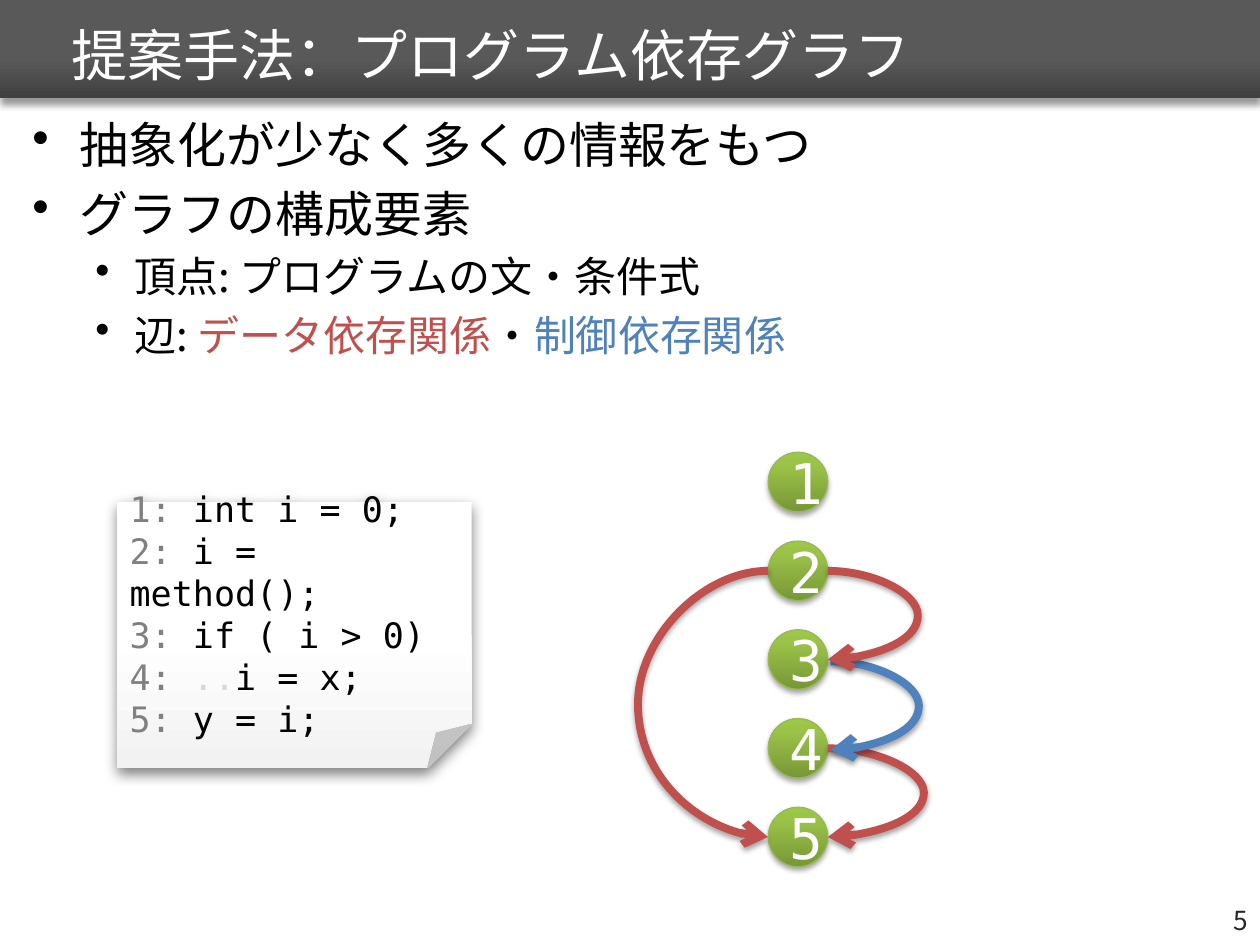
from lxml import etree
from pptx import Presentation
from pptx.dml.color import RGBColor
from pptx.enum import shapes, text
from pptx.oxml.ns import qn
from pptx.util import Pt

SANS, MONO = "Noto Sans CJK JP", "DejaVu Sans Mono"
WHITE, BLACK, GREY, PALE = "FFFFFF", "000000", "808080", "D9D9D9"
RED, BLUE = "C0504D", "4F81BD"
GREEN = [(0, "779737"), (80, "9BC348"), (100, "9DC746")]
SOFT = (35, 3.1, 1.8)


def rgb(value):
    return RGBColor.from_string(value)


def child(parent, tag, **attrs):
    """Append a DrawingML element with the given attributes."""
    return etree.SubElement(parent, qn("a:" + tag), {k: str(v) for k, v in attrs.items()})


class Deck:
    """Style and current slide; all lengths are points."""

    def __init__(self, width, height):
        self.prs = Presentation()
        self.prs.slide_width, self.prs.slide_height = Pt(width), Pt(height)
        self.s = self.prs.slides.add_slide(self.prs.slide_layouts[6])

    def shadow(self, sp, alpha, blur, dist):
        spPr = sp._element.spPr
        effects = spPr.find(qn("a:effectLst"))
        if effects is None:
            effects = child(spPr, "effectLst")
        outer = child(effects, "outerShdw", blurRad=Pt(blur), dist=Pt(dist),
                      dir=5400000, algn="t", rotWithShape=0)
        child(child(outer, "srgbClr", val=BLACK), "alpha", val=alpha * 1000)

    def shape(self, kind, box, stops, angle, shadow, line=None):
        """Add a shape with a gradient; angle runs anticlockwise from the right."""
        sp = self.s.shapes.add_shape(kind, *map(Pt, box))
        sp.fill.gradient()
        sp.fill.gradient_angle = angle
        stop_list = sp._element.spPr.find(qn("a:gradFill")).find(qn("a:gsLst"))
        for old in list(stop_list):
            stop_list.remove(old)
        for pos, color in stops:
            child(child(stop_list, "gs", pos=pos * 1000), "srgbClr", val=color)
        if line:
            sp.line.color.rgb, sp.line.width = rgb(line), Pt(0.75)
        else:
            sp.line.fill.background()
        sp.shadow.inherit = False
        self.shadow(sp, *shadow)
        return sp

    def textbox(self, box, anchor=text.MSO_ANCHOR.MIDDLE):
        sp = self.s.shapes.add_textbox(*map(Pt, box))
        sp.text_frame.word_wrap = True
        sp.text_frame.vertical_anchor = anchor
        return sp

    def label(self, sp, lines, size, font, align=text.PP_ALIGN.LEFT):
        """Fill a shape with lines, each a list of (text, colour) runs."""
        tf = sp.text_frame
        for i, runs in enumerate(lines):
            p = tf.add_paragraph() if i else tf.paragraphs[0]
            p.alignment = align
            for words, color in runs:
                r = p.add_run()
                r.text = words
                r.font.size, r.font.name = Pt(size), font
                r.font.color.rgb = rgb(color)
                child(r._r.get_or_add_rPr(), "ea", typeface=font)
        return tf.paragraphs

    def bullet(self, p, level, left, hanging):
        p.level = level
        pPr = p._p.get_or_add_pPr()
        pPr.set("marL", str(Pt(left)))
        pPr.set("indent", str(-Pt(hanging)))
        child(pPr, "buChar", char="•")

    def arc(self, x, top, bottom, bulge, color):
        """Curved arrow down; a negative bulge bends it to the left."""
        width = 0.125
        end = x + (width if bulge > 0 else -width)
        c = self.s.shapes.add_connector(
            shapes.MSO_CONNECTOR.CURVE, Pt(x), Pt(top), Pt(end), Pt(bottom))
        guides = c._element.spPr.find(qn("a:prstGeom")).find(qn("a:avLst"))
        if guides is None:
            guides = child(c._element.spPr.find(qn("a:prstGeom")), "avLst")
        adjust = round(abs(bulge) / width * 100000)
        child(guides, "gd", name="adj1", fmla=f"val {adjust}")
        c.line.color.rgb, c.line.width = rgb(color), Pt(4.5)
        child(c.line._get_or_add_ln(), "tailEnd", type="arrow")
        self.shadow(c, *SOFT)


def main():
    d = Deck(720, 540)
    kinds = shapes.MSO_SHAPE

    d.shape(kinds.RECTANGLE, (0, 0, 720, 56), [(60, "595959"), (100, "404040")],
            270, (40, 4, 3))
    d.label(d.textbox((34, 6, 648, 50)),
            [[("提案手法：プログラム依存グラフ", WHITE)]], 32, SANS)

    body = d.textbox((11.5, 62, 708.5, 444), text.MSO_ANCHOR.TOP)
    points = [
        (0, [("抽象化が少なく多くの情報をもつ", BLACK)]),
        (0, [("グラフの構成要素", BLACK)]),
        (1, [("頂点: プログラムの文・条件式", BLACK)]),
        (1, [("辺: ", BLACK), ("データ依存関係", RED), ("・", BLACK),
             ("制御依存関係", BLUE)]),
    ]
    paragraphs = d.label(body, [runs for _, runs in points], 28, SANS)
    for i, (p, (level, _)) in enumerate(zip(paragraphs, points)):
        if i:
            p.space_before = Pt((5.6, 4.8)[level])
        d.bullet(p, level, *[(27, 27), (58.5, 22.5)][level])
        for r in p.runs:
            r.font.size = Pt((28, 24)[level])

    d.label(d.textbox((552, 511, 168, 29)), [[("5", "262626")]], 15, SANS,
            text.PP_ALIGN.RIGHT)

    left, first, step, size = 439, 258.5, 50.7, 34
    right = left + size
    middle = {n: first + (n - 1) * step + size / 2 for n in range(1, 6)}
    for n, y in middle.items():
        node = d.shape(kinds.OVAL, (left, y - size / 2, size, size), GREEN, 90,
                       SOFT, "98B955")
        d.label(node, [[(str(n), WHITE)]], 32, MONO, text.PP_ALIGN.CENTER)

    d.arc(right, middle[4], middle[5], 60.6, RED)
    d.arc(left, middle[2], middle[5], -82, RED)

    note = d.shape(kinds.FOLDED_CORNER, (67, 287, 202.5, 152),
                   [(0, WHITE), (50, WHITE), (100, "F2F2F2")], 270, (50, 8, 3))
    d.label(note, [
        [("1: ", GREY), ("int i = 0;", BLACK)],
        [("2: ", GREY), ("i = method();", BLACK)],
        [("3:", GREY), (" if ( i > 0)", BLACK)],
        [("4: ", GREY), ("..", PALE), ("i = x;", BLACK)],
        [("5:", GREY), (" y = i;", BLACK)],
    ], 20, MONO)

    d.arc(right + 1.5, middle[3] + 1, middle[4] + 1, 55.8, BLUE)
    d.arc(right, middle[2], middle[3], 56.8, RED)

    d.prs.save("out.pptx")


if __name__ == "__main__":
    main()
